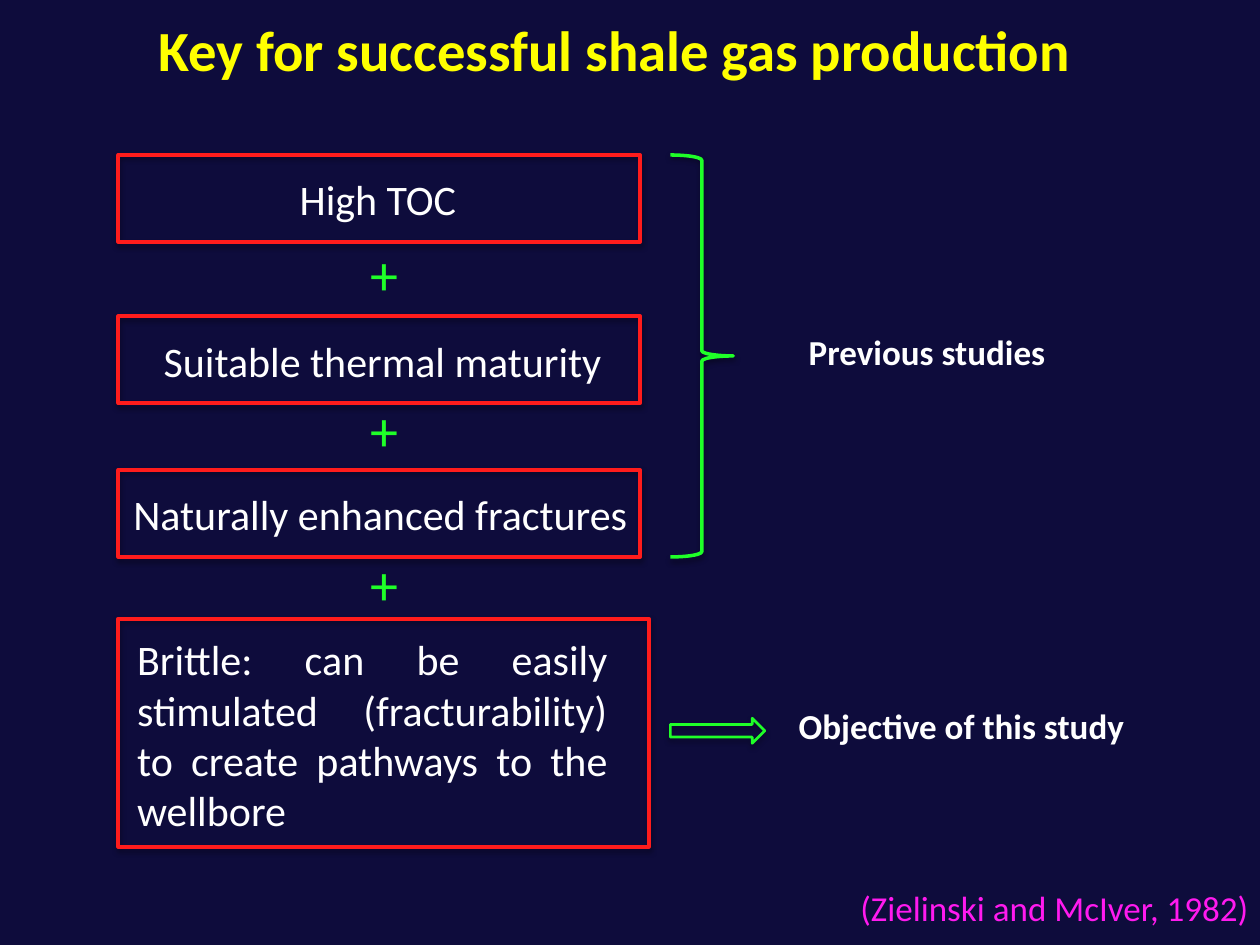
"""Build the slide on the keys for successful shale gas production."""
import dataclasses

import lxml.etree
import pptx
import pptx.dml.color
import pptx.enum.shapes
import pptx.enum.text
import pptx.oxml.ns
import pptx.util

Inches = pptx.util.Inches
Kind = pptx.enum.shapes.MSO_SHAPE
Align = pptx.enum.text.PP_ALIGN
Anchor = pptx.enum.text.MSO_ANCHOR
Box = tuple[float, float, float, float]
RED, GREEN, WHITE = "FF1C1C", "1FFF28", "FFFFFF"


@dataclasses.dataclass
class Step:
    top: float
    label: str
    left: float
    width: float


@dataclasses.dataclass
class Note:
    text: str
    box: Box
    color: str = WHITE
    bold: bool = True


STEPS = [
    Step(1.23, "High TOC", 2.28, 1.93),
    Step(2.51, "Suitable thermal maturity", 1.2, 3.72),
    Step(3.73, "Naturally enhanced fractures", 0.96, 4.18),
]
BRITTLE = ("Brittle: can be easily stimulated (fracturability) "
           "to create pathways to the wellbore")
NOTES = [
    Note("Previous studies", (6.32, 2.57, 2.15, 0.44)),
    Note("Objective of this study", (6.24, 5.54, 2.81, 0.44)),
    Note("(Zielinski and McIver, 1982)", (6.73, 6.99, 3.4, 0.44), "FF1AEF", False),
]


def paint(color: str) -> pptx.dml.color.RGBColor:
    return pptx.dml.color.RGBColor.from_string(color)


def write(frame, text: str, *, size: float = 24, color: str = WHITE,
          bold: bool = False, align=Align.LEFT, anchor=Anchor.TOP,
          wrap: bool = False) -> None:
    frame.word_wrap = wrap
    frame.vertical_anchor = anchor
    para = frame.paragraphs[0]
    para.alignment = align
    run = para.add_run()
    run.text = text
    font = run.font
    font.name, font.size, font.bold = "Calibri", pptx.util.Pt(size), bold
    font.color.rgb = paint(color)


def label(slide, box: Box, text: str, **style) -> None:
    write(slide.shapes.add_textbox(*map(Inches, box)).text_frame, text, **style)


def shade(shape, alpha: int) -> None:
    shape.shadow.inherit = False
    name = pptx.oxml.ns.qn
    effect = shape._element.spPr.find(name("a:effectLst"))
    outer = lxml.etree.SubElement(
        effect, name("a:outerShdw"), blurRad=str(pptx.util.Pt(3.1)),
        dist=str(pptx.util.Pt(1.8)), dir="5400000", rotWithShape="0")
    tint = lxml.etree.SubElement(outer, name("a:srgbClr"), val="000000")
    lxml.etree.SubElement(tint, name("a:alpha"), val=str(alpha * 1000))


def outline(slide, kind: Kind, box: Box, color: str, width: float,
            alpha: int = 35) -> None:
    shape = slide.shapes.add_shape(kind, *map(Inches, box))
    shape.fill.background()
    shape.line.color.rgb = paint(color)
    shape.line.width = pptx.util.Pt(width)
    shade(shape, alpha)


def main() -> None:
    deck = pptx.Presentation()
    deck.slide_width, deck.slide_height = Inches(10), Inches(7.5)
    slide = deck.slides.add_slide(deck.slide_layouts[5])
    slide.background.fill.solid()
    slide.background.fill.fore_color.rgb = paint("0E0C3C")

    title = slide.shapes.title
    title.left, title.top, title.width, title.height = map(
        Inches, (1.08, -0.13, 7.7, 1.03))
    write(title.text_frame, "Key for successful shale gas production ",
          size=32.4, color="FFFF00", bold=True, align=Align.CENTER,
          anchor=Anchor.MIDDLE, wrap=True)

    for step in STEPS:
        outline(slide, Kind.RECTANGLE, (0.94, step.top, 4.14, 0.69), RED, 2.25)
        label(slide, (step.left, step.top + 0.1, step.width, 0.5), step.label)
    outline(slide, Kind.RECTANGLE, (0.94, 4.91, 4.21, 1.81), RED, 2.25)
    label(slide, (0.99, 4.98, 3.93, 1.7), BRITTLE, align=Align.JUSTIFY, wrap=True)

    for top in (1.85, 3.09, 4.31):
        label(slide, (2.84, top, 0.43, 0.64), "+", size=32, color=GREEN)

    outline(slide, Kind.RIGHT_BRACE, (5.32, 1.23, 0.5, 3.19), GREEN, 2, 38)
    outline(slide, Kind.RIGHT_ARROW, (5.32, 5.7, 0.75, 0.2), GREEN, 1.5)
    for note in NOTES:
        label(slide, note.box, note.text, size=20, color=note.color, bold=note.bold)
    deck.save("out.pptx")


if __name__ == "__main__":
    main()
